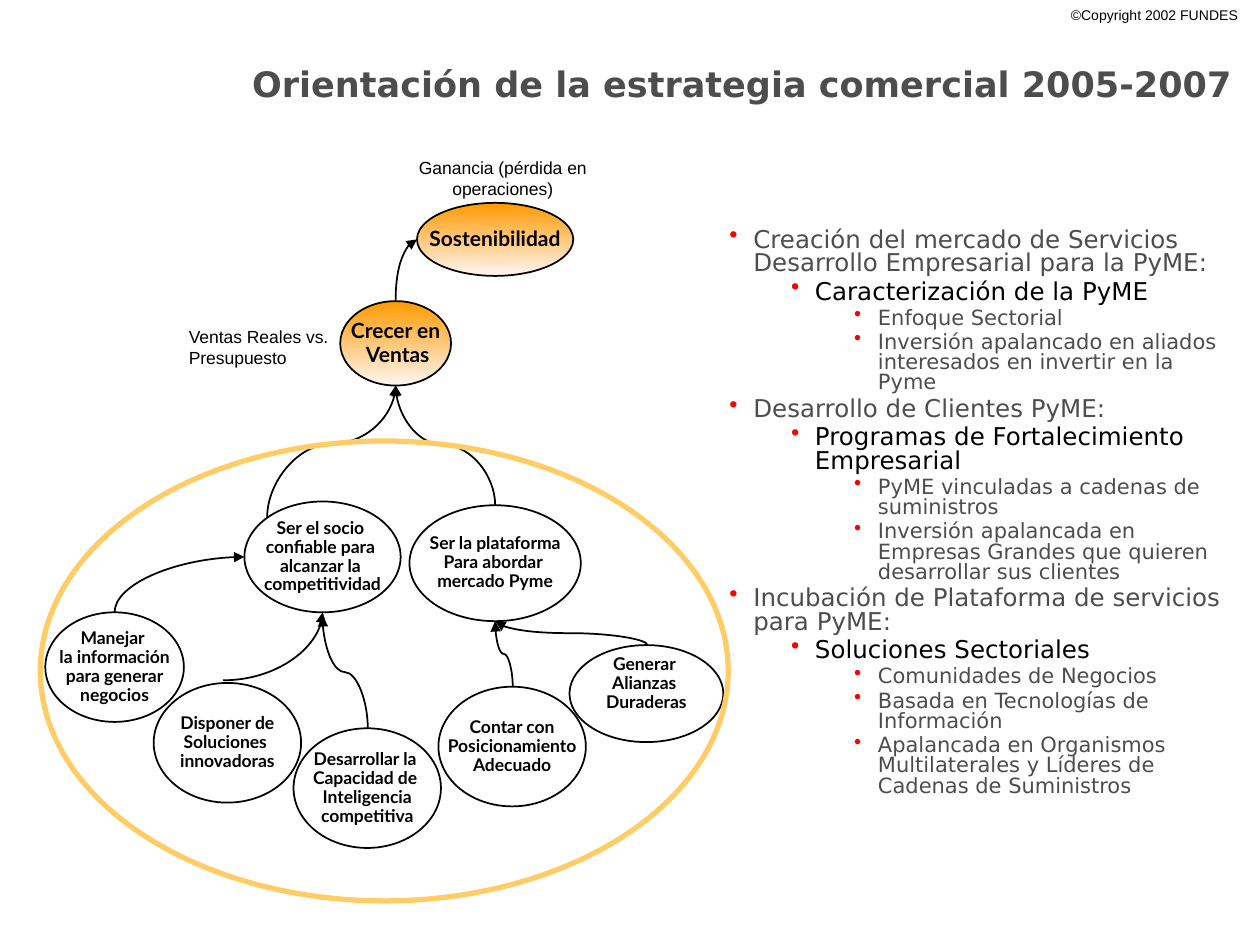
"""Builds the slide on the orientation of the 2005-2007 commercial strategy."""
from typing import NamedTuple, Optional

from lxml import etree
from pptx import Presentation
from pptx import util as u
from pptx.dml.color import RGBColor
from pptx.enum import shapes, text
from pptx.oxml import ns

BLACK = RGBColor(0x00, 0x00, 0x00)
WHITE = RGBColor(0xFF, 0xFF, 0xFF)
GRAY = RGBColor(0x4D, 0x4D, 0x4D)
RED = RGBColor(0xFF, 0x00, 0x00)
ORANGE = RGBColor(0xFF, 0x99, 0x00)
CREAM = RGBColor(0xFF, 0xF7, 0xF3)
GOLD = RGBColor(0xFF, 0xCC, 0x66)


class Box(NamedTuple):
    left: float
    top: float
    width: float
    height: float


class Goal(NamedTuple):
    box: Box
    lines: tuple
    is_result: bool = False
    bottom_inset: float = 0.05


class Link(NamedTuple):
    start: tuple
    end: tuple
    bend: Optional[float] = None
    leaves_sideways: bool = False


class Level(NamedTuple):
    indent: float
    size: int
    color: RGBColor


class Label(NamedTuple):
    box: Box
    words: str
    size: int
    font: str = "Arial"
    color: RGBColor = BLACK
    align: text.PP_ALIGN = text.PP_ALIGN.LEFT
    wraps: bool = True
    bold: bool = False
    anchor: text.MSO_ANCHOR = text.MSO_ANCHOR.TOP


LABELS = [
    Label(Box(8.4, 0, 1.53, 0.23), "©Copyright 2002 FUNDES", 8, wraps=False),
    Label(Box(1.32, 0.31, 8.56, 0.7), "Orientación de la estrategia comercial 2005-2007", 20,
          "DejaVu Sans", GRAY, text.PP_ALIGN.RIGHT, bold=True, anchor=text.MSO_ANCHOR.MIDDLE),
    Label(Box(3.04, 1.2, 1.9, 0.43), "Ganancia (pérdida en operaciones)", 10,
          align=text.PP_ALIGN.CENTER),
    Label(Box(1.4, 2.54, 1.83, 0.43), "Ventas Reales vs. Presupuesto", 10),
]

GOALS = [
    Goal(Box(2.7, 2.39, 0.88, 0.67), ("Crecer en", " Ventas"), True),
    Goal(Box(3.31, 1.61, 1.24, 0.58), ("Sostenibilidad",), True),
    Goal(Box(1.94, 3.98, 1.24, 0.88),
         ("Ser el socio ", "confiable para ", "alcanzar la ", "competitividad")),
    Goal(Box(0.36, 4.86, 1.1, 0.87),
         ("Manejar ", "la información", "para generar", "negocios")),
    Goal(Box(3.25, 4.01, 1.36, 0.92),
         ("Ser la plataforma", "Para abordar ", "mercado Pyme")),
    Goal(Box(4.52, 5.12, 1.22, 0.77), ("Generar ", "Alianzas ", "Duraderas"), bottom_inset=0.2),
    Goal(Box(3.48, 5.45, 1.17, 0.95), ("Contar con", "Posicionamiento", "Adecuado")),
    Goal(Box(1.22, 5.42, 1.17, 0.95), ("Disponer de", "Soluciones ", "innovadoras")),
    Goal(Box(2.33, 5.78, 1.17, 0.95),
         ("Desarrollar la ", "Capacidad de ", "Inteligencia", "competitiva")),
]

LINKS = [
    Link((3.14, 2.39), (3.31, 1.9)),
    Link((3.93, 4.01), (3.14, 3.06), 0.5),
    Link((2.92, 5.78), (2.56, 4.89), 0.5),
    Link((5.14, 5.12), (3.93, 4.93), 0.5),
    Link((2.12, 4.11), (3.14, 3.06), 0.56),
    Link((4.07, 5.45), (3.93, 4.93), 0.5),
    Link((0.91, 4.86), (1.94, 4.42)),
    Link((1.77, 5.4), (2.56, 4.86), leaves_sideways=True),
]

LEVELS = [Level(0.19, 14, GRAY), Level(0.68, 14, BLACK), Level(1.18, 12, GRAY)]

OUTLINE = [
    (0, "Creación del mercado de Servicios Desarrollo Empresarial para la PyME:"),
    (1, "Caracterización de la PyME"),
    (2, "Enfoque Sectorial"),
    (2, "Inversión apalancado en aliados interesados en invertir en la Pyme"),
    (0, "Desarrollo de Clientes PyME:"),
    (1, "Programas de Fortalecimiento Empresarial"),
    (2, "PyME vinculadas a cadenas de suministros"),
    (2, "Inversión apalancada en Empresas Grandes que quieren desarrollar sus clientes"),
    (0, "Incubación de Plataforma de servicios para PyME:"),
    (1, "Soluciones Sectoriales"),
    (2, "Comunidades de Negocios"),
    (2, "Basada en Tecnologías de Información"),
    (2, "Apalancada en Organismos Multilaterales y Líderes de Cadenas de Suministros"),
]


def set_font(paragraph, name: str, size: int, color: RGBColor, bold: bool = False) -> None:
    font = paragraph.font
    font.name, font.size, font.bold = name, u.Pt(size), bold
    font.color.rgb = color


def add_label(slide, label: Label) -> None:
    frame = slide.shapes.add_textbox(*map(u.Inches, label.box)).text_frame
    frame.word_wrap = label.wraps
    frame.vertical_anchor = label.anchor
    paragraph = frame.paragraphs[0]
    paragraph.text = label.words
    paragraph.alignment = label.align
    set_font(paragraph, label.font, label.size, label.color, label.bold)


def add_outline(slide, box: Box) -> None:
    frame = slide.shapes.add_textbox(*map(u.Inches, box)).text_frame
    frame.word_wrap = True
    for index, (depth, words) in enumerate(OUTLINE):
        level = LEVELS[depth]
        paragraph = frame.add_paragraph() if index else frame.paragraphs[0]
        paragraph.text = words
        paragraph.level = depth
        paragraph.line_spacing = 0.8
        if index:
            paragraph.space_before = u.Pt(level.size * 0.2)
        props = paragraph._p.get_or_add_pPr()
        props.set("marL", str(u.Inches(level.indent)))
        props.set("indent", str(-u.Inches(0.19)))
        tint = etree.SubElement(props, ns.qn("a:buClr"))
        etree.SubElement(tint, ns.qn("a:srgbClr"), val=str(RED))
        etree.SubElement(props, ns.qn("a:buChar"), char="•")
        set_font(paragraph, "DejaVu Sans", level.size, level.color)


def add_ellipse(slide, box: Box, color: RGBColor, width: float):
    ellipse = slide.shapes.add_shape(shapes.MSO_SHAPE.OVAL, *map(u.Inches, box))
    ellipse.shadow.inherit = False
    ellipse.line.color.rgb = color
    ellipse.line.width = u.Pt(width)
    return ellipse


def add_goal(slide, goal: Goal) -> None:
    ellipse = add_ellipse(slide, goal.box, BLACK, 1)
    if goal.is_result:
        ellipse.fill.gradient()
        ellipse.fill.gradient_angle = 270
        for stop, color in zip(ellipse.fill.gradient_stops, (ORANGE, CREAM)):
            stop.color.rgb = color
    else:
        ellipse.fill.solid()
        ellipse.fill.fore_color.rgb = WHITE
    frame = ellipse.text_frame
    frame.word_wrap = False
    frame.vertical_anchor = text.MSO_ANCHOR.MIDDLE
    frame.margin_bottom = u.Inches(goal.bottom_inset)
    for index, line in enumerate(goal.lines):
        paragraph = frame.add_paragraph() if index else frame.paragraphs[0]
        paragraph.text = line
        paragraph.alignment = text.PP_ALIGN.CENTER
        paragraph.line_spacing = 0.95 if goal.is_result else 0.9
        set_font(paragraph, "Lato", 12 if goal.is_result else 10, BLACK, True)


def add_link(slide, link: Link) -> None:
    (x1, y1), (x2, y2) = link.start, link.end
    to_right = x2 > x1
    if not link.leaves_sideways:
        mid_x, mid_y = (x1 + x2) / 2, (y1 + y2) / 2
        half_w, half_h = abs(y2 - y1) / 2, abs(x2 - x1) / 2
        x1, x2 = mid_x - half_w, mid_x + half_w
        y1, y2 = mid_y - half_h, mid_y + half_h
        if not to_right:
            x1, x2 = x2, x1
    curve = slide.shapes.add_connector(shapes.MSO_CONNECTOR.CURVE, *map(u.Inches, (x1, y1, x2, y2)))
    curve.line.color.rgb = BLACK
    curve.line.width = u.Pt(1)
    props = curve._element.spPr
    if not link.leaves_sideways:
        props.find(ns.qn("a:xfrm")).set("rot", str((270 if to_right else 90) * 60000))
    geometry = props.find(ns.qn("a:prstGeom"))
    if link.bend is None:
        geometry.set("prst", "curvedConnector2")
    else:
        etree.SubElement(geometry.find(ns.qn("a:avLst")), ns.qn("a:gd"),
                         name="adj1", fmla=f"val {round(link.bend * 100000)}")
    etree.SubElement(props.find(ns.qn("a:ln")), ns.qn("a:tailEnd"), type="triangle")
    etree.SubElement(props, ns.qn("a:effectLst"))


def main() -> None:
    deck = Presentation()
    deck.slide_width, deck.slide_height = u.Inches(10), u.Inches(7.5)
    slide = deck.slides.add_slide(deck.slide_layouts[6])
    for label in LABELS:
        add_label(slide, label)
    add_outline(slide, Box(5.69, 1.77, 4.13, 4.95))
    for goal in GOALS:
        add_goal(slide, goal)
    for link in LINKS:
        add_link(slide, link)
    add_ellipse(slide, Box(0.32, 3.5, 5.46, 3.65), GOLD, 3).fill.background()
    deck.save("out.pptx")


if __name__ == "__main__":
    main()
